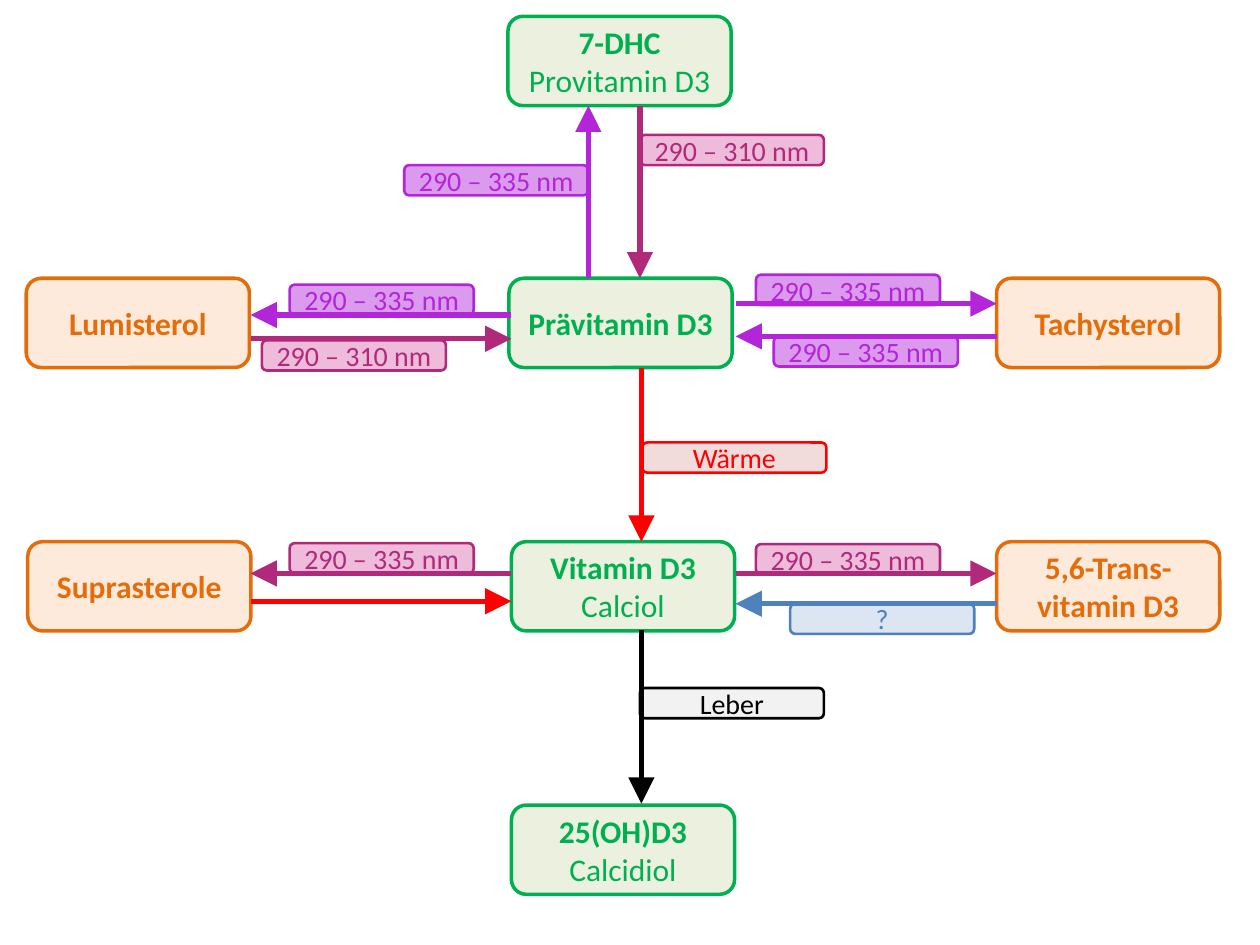
from lxml import etree
from pptx import Presentation
from pptx import util as u
from pptx.dml.color import RGBColor
from pptx.enum import shapes, text
from pptx.oxml.ns import qn

GREEN, ORANGE = ("00B050", "EBF1DE"), ("E46C0A", "FDEADA")
VIOLET, PINK = ("B225D9", "DC9AEE"), ("B1297A", "EFBBDA")
RED, BLUE = ("FF0000", "F2DCDB"), ("4F81BD", "DCE6F2")
BLACK = ("000000", "F2F2F2")
NODE, TAG = (4.5, 1.8), (3.71, 0.61)
LONG, SHORT = "290 – 335 nm", "290 – 310 nm"


def paint(fmt, tint):
    fmt.color.rgb = RGBColor.from_string(tint)


def panel(slide, x, y, size, hue, lines, width, points, bold):
    ink, tint = hue
    box = slide.shapes.add_shape(
        shapes.MSO_SHAPE.ROUNDED_RECTANGLE, u.Cm(x), u.Cm(y), *map(u.Cm, size))
    box.shadow.inherit = False
    box.fill.solid()
    box.fill.fore_color.rgb = RGBColor.from_string(tint)
    paint(box.line, ink)
    box.line.width = u.Pt(width)
    frame = box.text_frame
    frame.word_wrap = True
    frame.vertical_anchor = text.MSO_ANCHOR.MIDDLE
    for i, line in enumerate(lines):
        par = frame.add_paragraph() if i else frame.paragraphs[0]
        par.text = line
        par.alignment = text.PP_ALIGN.CENTER
        par.font.name = "Calibri"
        par.font.size = u.Pt(points)
        par.font.bold = bold and i == 0
        paint(par.font, ink)


def node(slide, x, y, hue, *lines):
    panel(slide, x, y, NODE, hue, lines, 2, 18, True)


def tag(slide, x, y, hue, label):
    panel(slide, x, y, TAG, hue, [label], 1.5, 16, False)


def arrow(slide, x1, y1, x2, y2, hue):
    line = slide.shapes.add_connector(
        shapes.MSO_CONNECTOR.STRAIGHT, *map(u.Cm, (x1, y1, x2, y2)))
    paint(line.line, hue[0])
    line.line.width = u.Pt(3)
    etree.SubElement(line.line._get_or_add_ln(), qn("a:tailEnd"),
                     type="triangle", w="lg", len="lg")
    etree.SubElement(line._element.spPr, qn("a:effectLst"))


def head(slide, x, y):
    node(slide, x, y, GREEN, "7-DHC", "Provitamin D3")
    tag(slide, x - 2.09, y + 3, VIOLET, LONG)
    tag(slide, x + 2.66, y + 2.39, PINK, SHORT)
    arrow(slide, x + 1.62, y + 5.28, x + 1.62, y + NODE[1], VIOLET)
    arrow(slide, x + 2.66, y + NODE[1], x + 2.66, y + 5.28, PINK)


def row(slide, x, y, nodes, tags, links):
    for dx, hue, lines in nodes:
        node(slide, x + dx, y, hue, *lines)
    for dx, dy, hue, label in tags:
        tag(slide, x + dx, y + dy, hue, label)
    for start, end, dy, hue in links:
        arrow(slide, x + start, y + dy, x + end, y + dy, hue)


def fall(slide, x, y, hue, label, dx, dy):
    tag(slide, x + dx, y + dy, hue, label)
    arrow(slide, x, y, x, y + 3.5, hue)


def main():
    deck = Presentation()
    deck.slide_width, deck.slide_height = u.Cm(25.4), u.Cm(19.05)
    slide = deck.slides.add_slide(deck.slide_layouts[6])
    row(slide, 0.53, 5.61,
        [(0, ORANGE, ["Lumisterol"]),
         (9.73, GREEN, ["Prävitamin D3"]),
         (19.56, ORANGE, ["Tachysterol"])],
        [(5.31, 0.13, VIOLET, LONG), (4.75, 1.25, PINK, SHORT),
         (14.71, -0.07, VIOLET, LONG), (15.07, 1.17, VIOLET, LONG)],
        [(9.78, 4.52, 0.74, VIOLET), (4.52, 9.78, 1.22, PINK),
         (14.3, 19.56, 0.51, VIOLET), (19.56, 14.3, 1.17, VIOLET)])
    row(slide, 0.56, 10.92,
        [(0, ORANGE, ["Suprasterole"]),
         (9.75, GREEN, ["Vitamin D3", "Calciol"]),
         (19.53, ORANGE, ["5,6-Trans-vitamin D3"])],
        [(5.28, 0.03, PINK, LONG), (14.68, 0.05, PINK, LONG),
         (15.37, 1.25, BLUE, "?")],
        [(9.75, 4.49, 0.64, PINK), (4.49, 9.75, 1.2, RED),
         (14.27, 19.53, 0.64, PINK), (19.53, 14.27, 1.25, BLUE)])
    head(slide, 10.24, 0.33)
    node(slide, 10.31, 16.23, GREEN, "25(OH)D3", "Calcidiol")
    fall(slide, 12.93, 7.42, RED, "Wärme", 0.02, 1.5)
    fall(slide, 12.93, 12.7, BLACK, "Leber", -0.03, 1.17)
    deck.save("out.pptx")


if __name__ == "__main__":
    main()
